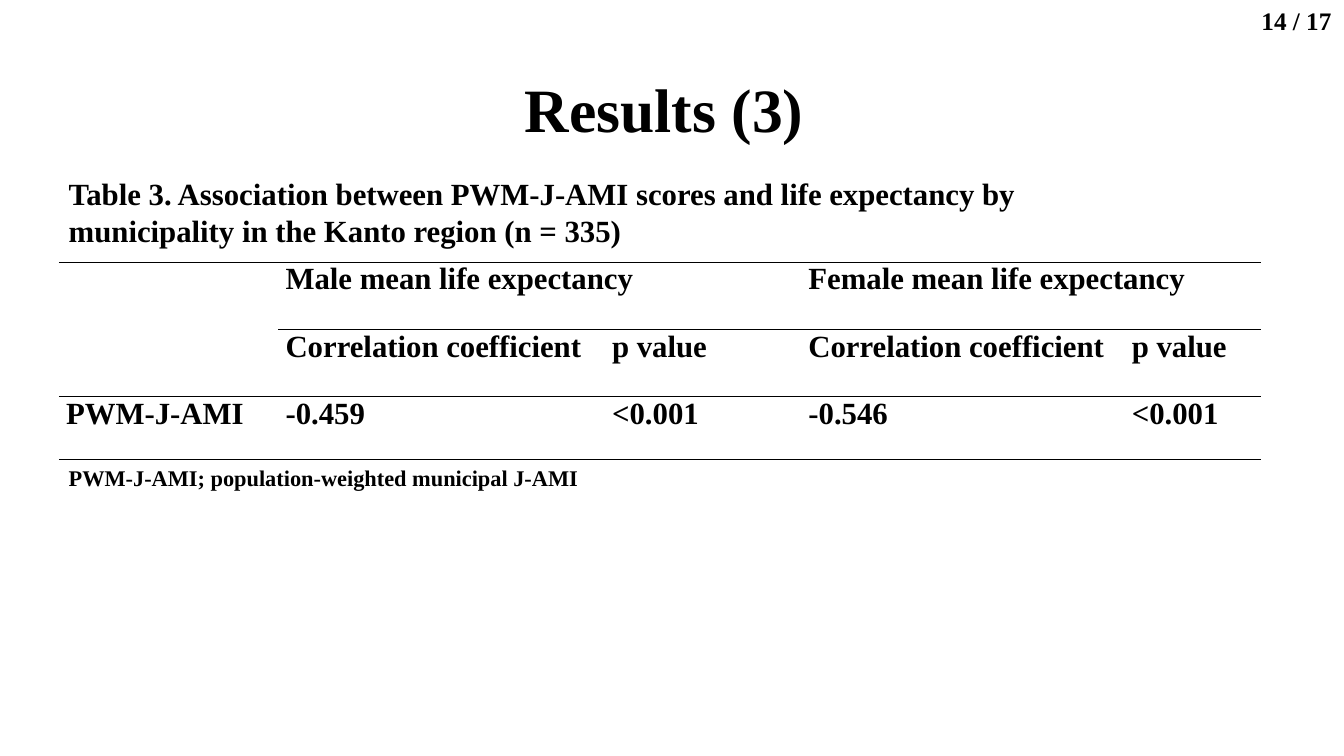
from lxml import etree
from pptx import Presentation
from pptx import util as u
from pptx.dml.color import RGBColor
from pptx.enum import text
from pptx.oxml.ns import qn

FONT = "Times New Roman"
BLACK = "000000"
WHITE = "FFFFFF"
COLS = [209, 311, 187, 308, 130]
ROWS = [64, 64, 60]
CELLS = [
    ["", "Male mean life expectancy", "", "Female mean life expectancy", ""],
    ["", "Correlation coefficient", "p value", "Correlation coefficient", "p value"],
    ["PWM-J-AMI", "-0.459", "<0.001", "-0.546", "<0.001"],
]


def px(n):
    return u.Emu(n * 9525)


def color(value):
    return RGBColor.from_string(value)


def write(tf, content, size):
    p = tf.paragraphs[0]
    p.text = content
    p.font.name = FONT
    p.font.size = u.Pt(size)
    p.font.bold = True
    p.font.color.rgb = color(BLACK)
    return p


def add_title(slide, box, content):
    sp = slide.shapes.title
    sp.left, sp.top, sp.width, sp.height = map(px, box)
    tf = sp.text_frame
    tf.vertical_anchor = text.MSO_ANCHOR.MIDDLE
    p = write(tf, content, 44)
    p.alignment = text.PP_ALIGN.CENTER
    p.line_spacing = 0.9


def add_label(slide, box, content, size):
    tf = slide.shapes.add_textbox(*map(px, box)).text_frame
    tf.word_wrap = True
    write(tf, content, size)


def set_borders(cell, top, bottom):
    tc_pr = cell._tc.get_or_add_tcPr()
    sides = {"lnL": False, "lnR": False, "lnT": top, "lnB": bottom}
    for i, (side, visible) in enumerate(sides.items()):
        ln = etree.Element(qn("a:" + side), w=str(u.Pt(1)))
        if visible:
            fill = etree.SubElement(ln, qn("a:solidFill"))
            etree.SubElement(fill, qn("a:srgbClr"), val=BLACK)
        else:
            etree.SubElement(ln, qn("a:noFill"))
        tc_pr.insert(i, ln)


def add_results_table(slide, left, top):
    frame = slide.shapes.add_table(
        len(ROWS), len(COLS), px(left), px(top), px(sum(COLS)), px(sum(ROWS)))
    table = frame.table
    table.first_row = table.horz_banding = False
    for column, width in zip(table.columns, COLS):
        column.width = px(width)
    for row, height in zip(table.rows, ROWS):
        row.height = px(height)
    for r, values in enumerate(CELLS):
        for c, value in enumerate(values):
            cell = table.cell(r, c)
            cell.margin_left = cell.margin_right = px(7)
            cell.margin_top = cell.margin_bottom = 0
            cell.fill.solid()
            cell.fill.fore_color.rgb = color(WHITE)
            write(cell.text_frame, value, 22)
            set_borders(cell, top=r != 1 or c > 0, bottom=r != 0 or c > 0)
    for c in (1, 3):
        table.cell(0, c).merge(table.cell(0, c + 1))


def add_results_slide(prs):
    slide = prs.slides.add_slide(prs.slide_layouts.get_by_name("Title Only"))
    add_title(slide, (88, 38, 1104, 139), "Results (3) ")
    add_label(slide, (1186, 0, 95, 38), " 14 / 17", 18)
    add_label(slide, (56, 162, 1059, 81),
              "Table 3. Association between PWM-J-AMI scores and life expectancy "
              "by municipality in the Kanto region (n = 335)", 22)
    add_results_table(slide, 56, 250)
    add_label(slide, (56, 437, 686, 36),
              "PWM-J-AMI; population-weighted municipal J-AMI", 16)


def main():
    prs = Presentation()
    prs.slide_width, prs.slide_height = px(1280), px(720)
    add_results_slide(prs)
    prs.save("out.pptx")


if __name__ == "__main__":
    main()
